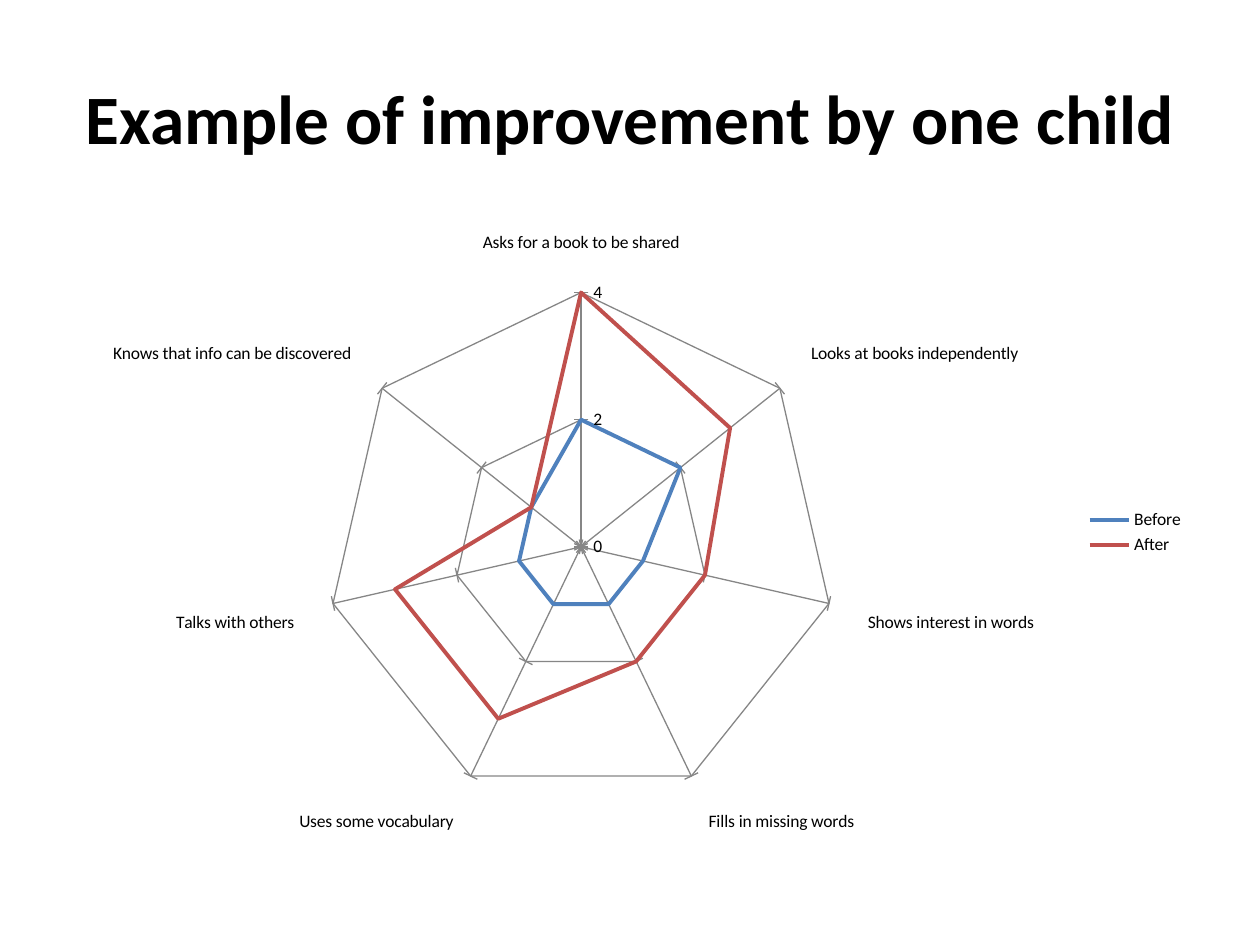
import pptx
import pptx.chart.data
import pptx.dml.color
import pptx.enum.chart
import pptx.enum.text
import pptx.util

Inches = pptx.util.Inches
Pt = pptx.util.Pt

FONT = "Calibri"
COLORS = {
    "text": "000000",
    "grid": "868686",
    "Before": "4F81BD",
    "After": "C0504D",
}
SKILLS = [
    "Asks for a book to be shared",
    "Looks at books independently",
    "Shows interest in words",
    "Fills in missing words",
    "Uses some vocabulary",
    "Talks with others",
    "Knows that info can be discovered",
]
SCORES = {
    "Before": (2, 2, 1, 1, 1, 1, 1),
    "After": (4, 3, 2, 2, 3, 3, 1),
}


def rgb(name):
    return pptx.dml.color.RGBColor.from_string(COLORS[name])


def style_font(font, size, bold=False):
    font.name = FONT
    font.size = Pt(size)
    font.bold = bold
    font.color.rgb = rgb("text")


def style_line(line, color, width):
    line.color.rgb = rgb(color)
    line.width = Pt(width)


def set_title(s, text):
    sp = s.shapes.title
    sp.left, sp.top = Inches(0.5), Inches(0.3)
    sp.width, sp.height = Inches(9), Inches(1.25)
    tf = sp.text_frame
    tf.text = text
    tf.word_wrap = True
    tf.vertical_anchor = pptx.enum.text.MSO_ANCHOR.MIDDLE
    p = tf.paragraphs[0]
    p.alignment = pptx.enum.text.PP_ALIGN.CENTER
    style_font(p.runs[0].font, 39.6, bold=True)


def add_radar(s):
    data = pptx.chart.data.CategoryChartData()
    data.categories = SKILLS
    for name, values in SCORES.items():
        data.add_series(name, values)
    chart = s.shapes.add_chart(
        pptx.enum.chart.XL_CHART_TYPE.RADAR,
        Inches(0.5), Inches(1.75), Inches(9), Inches(4.95), data,
    ).chart
    chart.has_title = False
    style_font(chart.font, 10)

    # Legend
    chart.has_legend = True
    chart.legend.position = pptx.enum.chart.XL_LEGEND_POSITION.RIGHT
    chart.legend.include_in_layout = False

    # Axes and web
    ticks = pptx.enum.chart.XL_TICK_MARK
    for axis, tick in ((chart.category_axis, ticks.OUTSIDE),
                       (chart.value_axis, ticks.CROSS)):
        axis.major_tick_mark = tick
        axis.has_major_gridlines = True
        style_line(axis.major_gridlines.format.line, "grid", 0.75)
        style_line(axis.format.line, "grid", 0.75)
    chart.value_axis.minimum_scale = 0
    chart.value_axis.maximum_scale = 4
    chart.value_axis.major_unit = 2

    # Series
    plot = chart.plots[0]
    plot.vary_by_categories = False
    for series in plot.series:
        style_line(series.format.line, series.name, 2.25)


def main():
    prs = pptx.Presentation()
    prs.slide_width, prs.slide_height = Inches(10), Inches(7.5)
    s = prs.slides.add_slide(prs.slide_layouts[5])
    set_title(s, "Example of improvement by one child")
    add_radar(s)
    prs.save("out.pptx")


if __name__ == "__main__":
    main()
